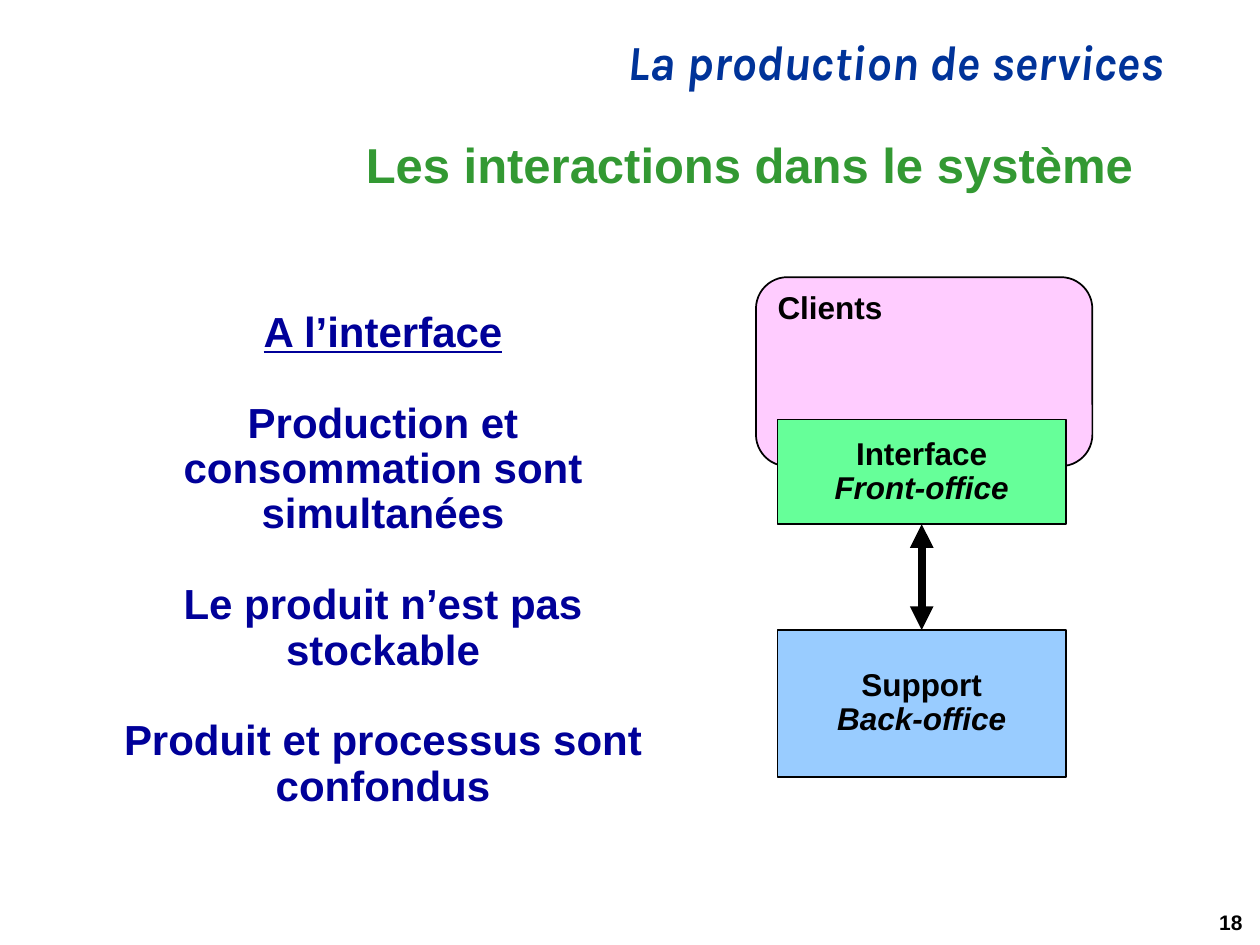
import pptx
import pptx.dml.color
import pptx.enum.shapes
import pptx.enum.text
import pptx.oxml
import pptx.oxml.ns
import pptx.util

Inches = pptx.util.Inches
Pt = pptx.util.Pt
RGBColor = pptx.dml.color.RGBColor
Align = pptx.enum.text.PP_ALIGN
Anchor = pptx.enum.text.MSO_ANCHOR
Shape = pptx.enum.shapes.MSO_SHAPE

BLACK = RGBColor(0x00, 0x00, 0x00)
BLUE = RGBColor(0x00, 0x33, 0x99)
NAVY = RGBColor(0x00, 0x00, 0x99)
GREEN = RGBColor(0x33, 0x99, 0x33)
PINK = RGBColor(0xFF, 0xCC, 0xFF)
MINT = RGBColor(0x66, 0xFF, 0x99)
SKY = RGBColor(0x99, 0xCC, 0xFF)


class SlideBuilder:
    """Holds the common style and the slide being built."""

    font_name = "Arial"
    line_spacing = 0.9

    def __init__(self, page):
        self.page = page

    def fill_text(self, frame, lines, size, color, align, anchor=Anchor.TOP,
                  font=None, gap=0, wrap=True):
        """Add one paragraph per (text, style) pair; style names font flags."""
        frame.auto_size = pptx.enum.text.MSO_AUTO_SIZE.NONE
        frame.word_wrap = wrap
        frame.vertical_anchor = anchor
        for index, (text, style) in enumerate(lines):
            para = frame.paragraphs[0] if index == 0 else frame.add_paragraph()
            para.alignment = align
            para.line_spacing = self.line_spacing
            if index and gap:
                para.space_before = Pt(gap)
            span = para.add_run()
            span.text = text
            span.font.name = font or self.font_name
            span.font.size = Pt(size)
            span.font.bold = True
            span.font.italic = "italic" in style
            span.font.underline = "underline" in style
            span.font.color.rgb = color

    def title(self, text, place, size, color):
        box = self.page.shapes.title
        box.left, box.top, box.width, box.height = map(Inches, place)
        self.fill_text(box.text_frame, [(text, "")], size, color,
                       Align.RIGHT, Anchor.MIDDLE)

    def text(self, lines, place, size, color, align, **options):
        box = self.page.shapes.add_textbox(*map(Inches, place))
        self.fill_text(box.text_frame, lines, size, color, align, **options)

    def block(self, kind, lines, place, fill, align=Align.CENTER,
              anchor=Anchor.MIDDLE):
        box = self.page.shapes.add_shape(kind, *map(Inches, place))
        box.shadow.inherit = False
        box.fill.solid()
        box.fill.fore_color.rgb = fill
        box.line.color.rgb = BLACK
        box.line.width = Pt(1)
        self.fill_text(box.text_frame, lines, 18, BLACK, align, anchor,
                       wrap=False)

    def double_arrow(self, x, top, bottom, width):
        arrow = self.page.shapes.add_connector(
            pptx.enum.shapes.MSO_CONNECTOR.STRAIGHT,
            Inches(x), Inches(top), Inches(x), Inches(bottom))
        arrow.line.color.rgb = BLACK
        arrow.line.width = Pt(width)
        line = arrow.line._get_or_add_ln()
        for end in ("a:headEnd", "a:tailEnd"):
            tip = pptx.oxml.parse_xml(
                f'<{end} {pptx.oxml.ns.nsdecls("a")} type="triangle"/>')
            line.append(tip)
        arrow._element.spPr.append(pptx.oxml.parse_xml(
            f'<a:effectLst {pptx.oxml.ns.nsdecls("a")}/>'))


def main():
    deck = pptx.Presentation()
    deck.slide_width = Inches(10)
    deck.slide_height = Inches(7.5)
    # Layout 5 is title only
    builder = SlideBuilder(deck.slides.add_slide(deck.slide_layouts[5]))

    # Course heading and title
    builder.text([("La production de services", "italic")],
                 (1.25, 0.25, 8.08, 0.52), 28, BLUE, Align.RIGHT, font="Karla")
    builder.title("Les interactions dans le système",
                  (1.17, 1.08, 7.92, 0.5), 28, GREEN)

    # Service system: clients, support and the interface between them
    left, width = 6.17, 2.29
    interface_top, interface_height = 3.33, 0.83
    support_top = 5
    builder.block(Shape.ROUNDED_RECTANGLE, [("Clients", "")],
                  (6, 2.2, 2.67, 1.5), PINK, Align.LEFT, Anchor.TOP)
    builder.block(Shape.RECTANGLE,
                  [("Support", ""), ("Back-office", "italic")],
                  (left, support_top, width, 1.17), SKY)
    builder.block(Shape.RECTANGLE,
                  [("Interface", ""), ("Front-office", "italic")],
                  (left, interface_top, width, interface_height), MINT)
    builder.double_arrow(left + width / 2, interface_top + interface_height,
                         support_top, 4.5)

    # Characteristics of the interface
    builder.text([("A l’interface", "underline"),
                  ("Production et consommation sont simultanées", ""),
                  ("Le produit n’est pas stockable", ""),
                  ("Produit et processus sont confondus", "")],
                 (0.75, 2.42, 4.58, 4.08), 24, NAVY, Align.CENTER, gap=26)

    # Page number
    builder.text([("18", "")], (6.81, 6.93, 3.15, 0.54), 12, BLACK,
                 Align.RIGHT, anchor=Anchor.BOTTOM)

    deck.save("out.pptx")


if __name__ == "__main__":
    main()
